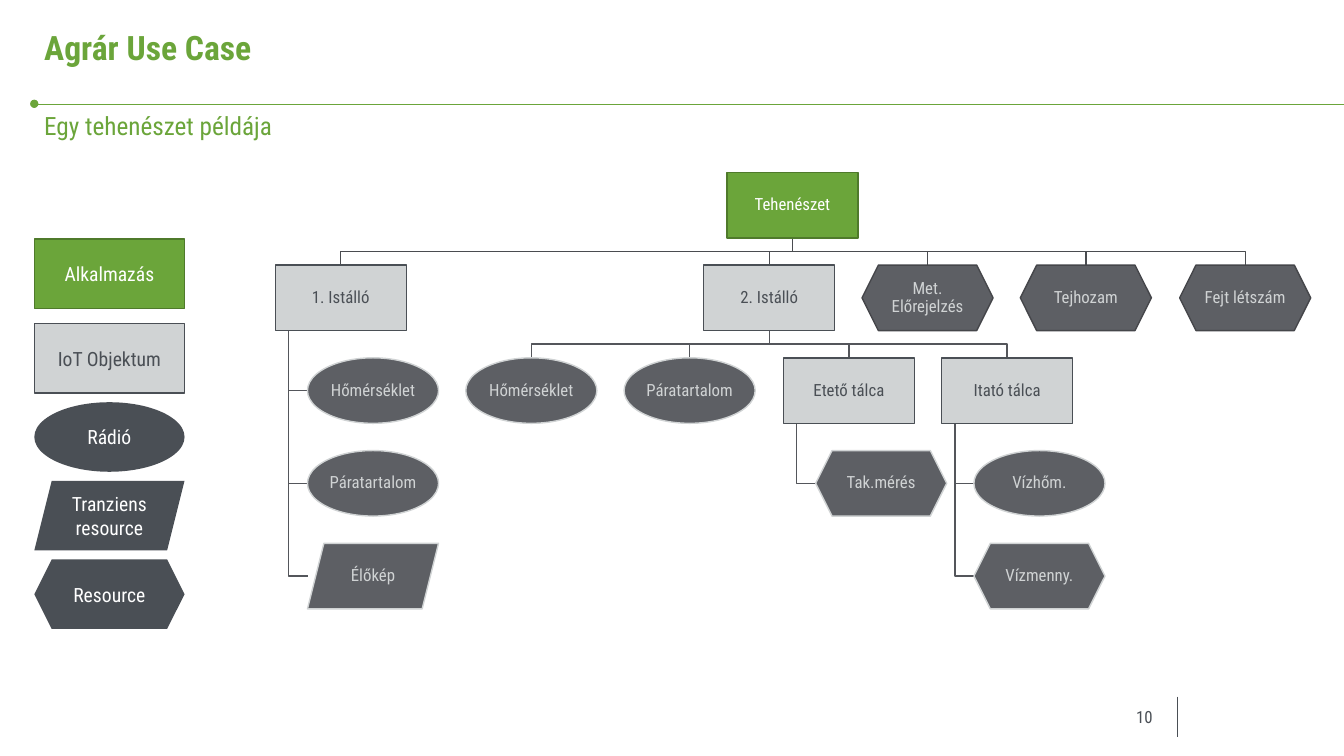
from lxml import etree
from pptx import Presentation
from pptx.dml.color import RGBColor
from pptx.enum.shapes import MSO_CONNECTOR, MSO_SHAPE as SHAPE
from pptx.enum.text import MSO_ANCHOR, PP_ALIGN
from pptx.oxml.ns import qn
from pptx.util import Inches, Pt

FONT = "Roboto Condensed"
GREEN = RGBColor(0x6B, 0xA5, 0x3A)
DARK_GREEN = RGBColor(0x4F, 0x7A, 0x2B)
SLATE = RGBColor(0x4A, 0x4F, 0x55)
GRAY = RGBColor(0x5D, 0x5F, 0x64)
EDGE_GRAY = RGBColor(0x45, 0x46, 0x4A)
LIGHT = RGBColor(0xD0, 0xD3, 0xD4)
WHITE = RGBColor(0xFF, 0xFF, 0xFF)
ROOT_LINK = RGBColor(0x4A, 0x4C, 0x50)
CHILD_LINK = RGBColor(0x54, 0x56, 0x5B)

NODE_W, NODE_H, GAP = 1.3, 0.65, 0.27
TREE_TOP = 1.71
HANG_INSET = 0.13

deck = Presentation()
deck.slide_width, deck.slide_height = Inches(13.33), Inches(7.5)
page = deck.slides.add_slide(deck.slide_layouts[6])


def style_text(shape, text, size, color, align, anchor):
    frame = shape.text_frame
    frame.word_wrap = True
    frame.vertical_anchor = anchor
    frame.text = text
    para = frame.paragraphs[0]
    para.alignment = align
    font = para.runs[0].font
    font.name, font.size, font.color.rgb = FONT, Pt(size), color
    return para


def add_box(kind, left, top, width, height, fill, edge, text, size, color):
    """Add a filled shape with centred text; edge None means no outline."""
    box = page.shapes.add_shape(kind, Inches(left), Inches(top), Inches(width), Inches(height))
    box.shadow.inherit = False
    box.fill.solid()
    box.fill.fore_color.rgb = fill
    if edge is None:
        box.line.fill.background()
    else:
        box.line.color.rgb, box.line.width = edge, Pt(1)
    style_text(box, text, size, color, PP_ALIGN.CENTER, MSO_ANCHOR.MIDDLE)
    return box


# Header rule with a dot at its left end, and the footer divider
for x1, y1, x2, y2, color, end in [
    (13.33, 1.03, 0.34, 1.03, GREEN, "oval"),
    (11.68, 6.91, 11.68, 7.31, SLATE, "none"),
]:
    rule = page.shapes.add_connector(
        MSO_CONNECTOR.STRAIGHT, Inches(x1), Inches(y1), Inches(x2), Inches(y2))
    rule.line.color.rgb, rule.line.width = color, Pt(0.25)
    properties = rule.element.spPr
    etree.SubElement(properties.find(qn("a:ln")), qn("a:tailEnd"), type=end)
    etree.SubElement(properties, qn("a:effectLst"))

# Title, subtitle and page number
for text, left, top, width, height, size, color, bold, anchor in [
    ("Agrár Use Case", 0.34, 0.26, 12.65, 0.69, 24, GREEN, True, MSO_ANCHOR.TOP),
    ("Egy tehenészet példája", 0.34, 1.04, 12.65, 0.35, 18, GREEN, False, MSO_ANCHOR.TOP),
    ("10", 11.17, 6.93, 0.51, 0.37, 12, SLATE, False, MSO_ANCHOR.MIDDLE),
]:
    box = page.shapes.add_textbox(Inches(left), Inches(top), Inches(width), Inches(height))
    para = style_text(box, text, size, color, PP_ALIGN.LEFT, anchor)
    para.runs[0].font.bold = bold
    if bold:
        para.line_spacing = 0.9

# Tree: kind -> shape, fill, edge, text colour
KINDS = {
    "app": (SHAPE.RECTANGLE, GREEN, DARK_GREEN, WHITE),
    "object": (SHAPE.RECTANGLE, LIGHT, SLATE, SLATE),
    "radio": (SHAPE.FLOWCHART_CONNECTOR, GRAY, LIGHT, LIGHT),
    "transient": (SHAPE.PARALLELOGRAM, GRAY, LIGHT, LIGHT),
    "resource": (SHAPE.HEXAGON, GRAY, LIGHT, LIGHT),
    "top resource": (SHAPE.HEXAGON, GRAY, EDGE_GRAY, LIGHT),
}
# key: text, kind, row, left, parent key, link style
NODES = {
    "farm": ("Tehenészet", "app", 0, 7.21, None, None),
    "barn 1": ("1. Istálló", "object", 1, 2.73, "farm", "fan"),
    "temperature 1": ("Hőmérséklet", "radio", 2, 3.05, "barn 1", "hang"),
    "humidity 1": ("Páratartalom", "radio", 3, 3.05, "barn 1", "hang"),
    "live view": ("Élőkép", "transient", 4, 3.05, "barn 1", "hang"),
    "barn 2": ("2. Istálló", "object", 1, 6.98, "farm", "fan"),
    "temperature 2": ("Hőmérséklet", "radio", 2, 4.62, "barn 2", "fan"),
    "humidity 2": ("Páratartalom", "radio", 2, 6.19, "barn 2", "fan"),
    "feeder": ("Etető tálca", "object", 2, 7.77, "barn 2", "fan"),
    "feed level": ("Tak.mérés", "resource", 3, 8.09, "feeder", "hang"),
    "drinker": ("Itató tálca", "object", 2, 9.34, "barn 2", "fan"),
    "water temperature": ("Vízhőm.", "radio", 3, 9.66, "drinker", "hang"),
    "water amount": ("Vízmenny.", "resource", 4, 9.66, "drinker", "hang"),
    "forecast": ("Met. Előrejelzés", "top resource", 1, 8.55, "farm", "fan"),
    "milk yield": ("Tejhozam", "top resource", 1, 10.12, "farm", "fan"),
    "milked count": ("Fejt létszám", "top resource", 1, 11.7, "farm", "fan"),
}
row_tops = [TREE_TOP + row * (NODE_H + GAP) for row in range(5)]

for text, kind, row, left, parent, link_style in NODES.values():
    if parent is None:
        continue
    parent_row, parent_left = NODES[parent][2:4]
    start_y = row_tops[parent_row] + NODE_H
    if link_style == "fan":
        start_x, end_x = parent_left + NODE_W / 2, left + NODE_W / 2
        bus_y = start_y + GAP / 2
        points = [(start_x, bus_y), (end_x, bus_y), (end_x, row_tops[row])]
    else:
        start_x = parent_left + HANG_INSET
        middle = row_tops[row] + NODE_H / 2
        points = [(start_x, middle), (left, middle)]
    outline = page.shapes.build_freeform(Inches(start_x), Inches(start_y))
    outline.add_line_segments([(Inches(x), Inches(y)) for x, y in points], close=False)
    link = outline.convert_to_shape()
    link.shadow.inherit = False
    link.fill.background()
    link.line.color.rgb = ROOT_LINK if parent == "farm" else CHILD_LINK
    link.line.width = Pt(1)

for text, kind, row, left, parent, link_style in NODES.values():
    shape, fill, edge, color = KINDS[kind]
    node = add_box(shape, left, row_tops[row], NODE_W, NODE_H, fill, edge, text, 12, color)
    frame = node.text_frame
    frame.margin_left = frame.margin_right = Inches(0.01)
    frame.margin_top = frame.margin_bottom = Inches(0.01)
    frame.paragraphs[0].line_spacing = 0.9

# Legend
for text, top, shape, fill, edge, color in [
    ("Alkalmazás", 2.37, SHAPE.RECTANGLE, GREEN, DARK_GREEN, WHITE),
    ("IoT Objektum", 3.21, SHAPE.RECTANGLE, LIGHT, SLATE, SLATE),
    ("Rádió", 3.99, SHAPE.FLOWCHART_CONNECTOR, SLATE, None, WHITE),
    ("Tranziens resource", 4.77, SHAPE.PARALLELOGRAM, SLATE, None, WHITE),
    ("Resource", 5.55, SHAPE.HEXAGON, SLATE, None, WHITE),
]:
    add_box(shape, 0.34, top, 1.49, 0.69, fill, edge, text, 14, color)

deck.save("out.pptx")
